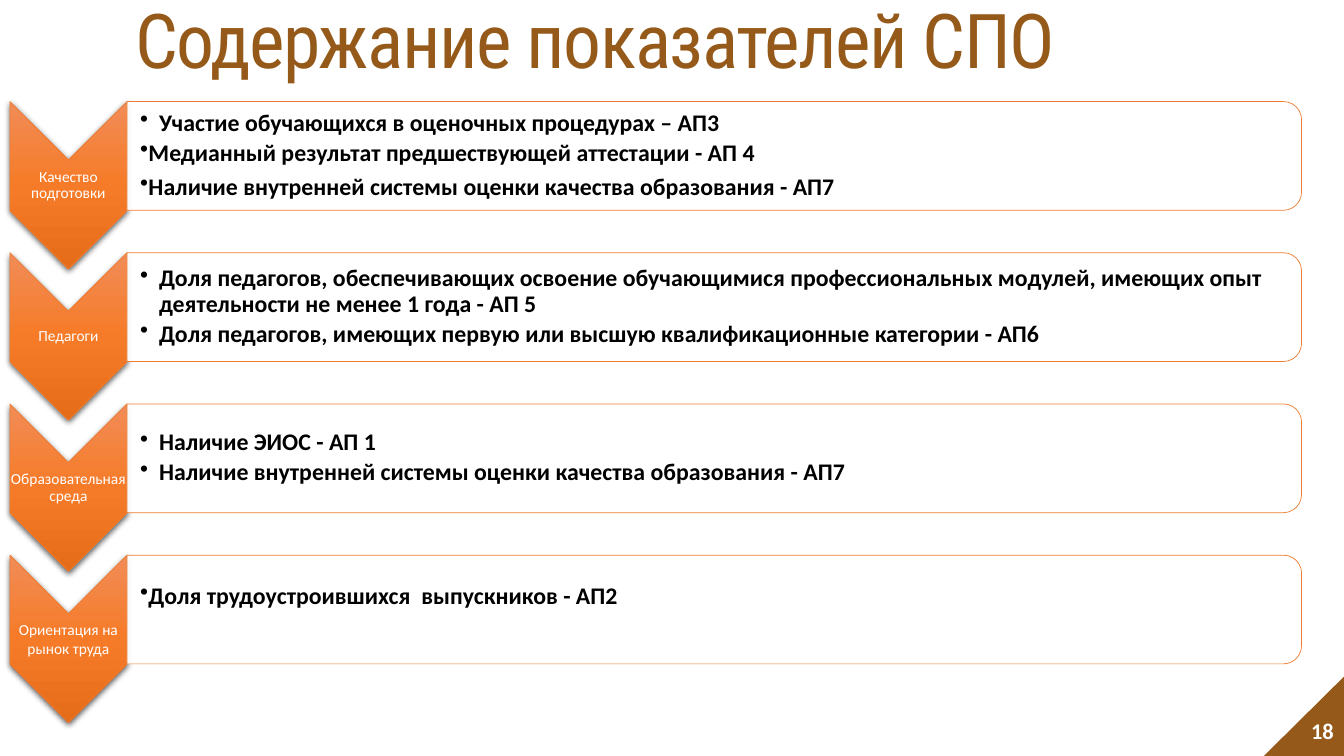
from dataclasses import dataclass

from lxml.etree import SubElement
from pptx import Presentation
from pptx.dml.color import RGBColor as Rgb
from pptx.enum.shapes import MSO_SHAPE as Preset
from pptx.enum.text import MSO_ANCHOR as Anchor, PP_ALIGN as Align
from pptx.oxml import parse_xml
from pptx.oxml.ns import nsdecls, qn
from pptx.util import Cm, Pt


@dataclass(frozen=True)
class Theme:
    brown: Rgb = Rgb.from_string("955A1A")
    orange: Rgb = Rgb.from_string("ED7D31")
    white: Rgb = Rgb.from_string("FFFFFF")
    black: Rgb = Rgb.from_string("000000")
    gradient: tuple = ((0, "F18C57"), (50, "F67B28"), (100, "E56C19"))
    heading_font: str = "Roboto Condensed"
    body_font: str = "Calibri"
    title_size: int = 54
    item_size: int = 17
    number_size: int = 16
    label_size: int = 11


theme = Theme()


def add_box(left, top, width, height, anchor, insets):
    """Add a wrapping text box; insets run left, top, right, bottom in cm."""
    frame = page.shapes.add_textbox(Cm(left), Cm(top), Cm(width), Cm(height)).text_frame
    frame.word_wrap = True
    frame.vertical_anchor = anchor
    frame.margin_left, frame.margin_top, frame.margin_right, frame.margin_bottom = map(Cm, insets)
    return frame


def add_span(para, text, size, color, bold=False, font=theme.body_font):
    span = para.add_run()
    span.text = text
    span.font.name = font
    span.font.size = Pt(size)
    span.font.bold = bold
    span.font.color.rgb = color
    return span


# Each item is its text and whether it has a hanging indent
sections = [
    ("Качество подготовки", [
        ("Участие обучающихся в оценочных процедурах – АП3", True),
        ("Медианный результат предшествующей аттестации - АП 4", False),
        ("Наличие внутренней системы оценки качества образования - АП7", False),
    ]),
    ("Педагоги", [
        ("Доля педагогов, обеспечивающих освоение обучающимися профессиональных модулей, "
         "имеющих опыт деятельности не менее 1 года - АП 5", True),
        ("Доля педагогов, имеющих первую или высшую квалификационные категории - АП6", True),
    ]),
    ("Образовательная среда", [
        ("Наличие ЭИОС - АП 1", True),
        ("Наличие внутренней системы оценки качества образования - АП7", True),
    ]),
    ("Ориентация на рынок труда", [
        ("Доля трудоустроившихся  выпускников - АП2", False),
    ]),
]

deck = Presentation()
deck.slide_width, deck.slide_height = Cm(33.87), Cm(19.05)
page = deck.slides.add_slide(deck.slide_layouts[6])

# Page corner and number
corner = page.shapes.add_shape(Preset.RIGHT_TRIANGLE, Cm(31.85), Cm(17.04), Cm(2.01), Cm(2.03))
corner.rotation = 270
corner.shadow.inherit = False
corner.fill.solid()
corner.fill.fore_color.rgb = theme.brown
corner.line.fill.background()

para = add_box(26.24, 17.91, 7.62, 1.02, Anchor.MIDDLE, (0.25, 0.13, 0.25, 0.13)).paragraphs[0]
para.alignment = Align.RIGHT
add_span(para, "18", theme.number_size, theme.white, bold=True)

# Title
para = add_box(0.38, 0.3, 29.24, 1.98, Anchor.BOTTOM, (0.25, 0.13, 0.25, 0.13)).paragraphs[0]
para.alignment = Align.CENTER
para.line_spacing = 0.9
title = add_span(para, "Содержание показателей СПО", theme.title_size, theme.brown,
                 font=theme.heading_font)
title.font._element.set("spc", "-100")

# Rows: a chevron pointing down and a panel rounded on the right
first_top, pitch = 2.56, 3.81
chevron_left, chevron_width, chevron_height = 0.25, 2.95, 4.22
panel_left, panel_width, panel_height = 3.2, 29.6, 2.74
stops = "".join(f'<a:gs pos="{place * 1000}"><a:srgbClr val="{color}"/></a:gs>'
                for place, color in theme.gradient)

for row, (label, items) in enumerate(sections):
    top = first_top + row * pitch
    last_row = row == len(sections) - 1

    # Rotated shapes are placed by their centre, with the sides swapped
    turned = []
    for preset, left, width, height in (
        (Preset.CHEVRON, chevron_left, chevron_width, chevron_height),
        (Preset.ROUND_2_SAME_RECTANGLE, panel_left, panel_width, panel_height),
    ):
        shift = (width - height) / 2
        shape = page.shapes.add_shape(preset, Cm(left + shift), Cm(top - shift),
                                      Cm(height), Cm(width))
        shape.rotation = 90
        shape.shadow.inherit = False
        shape.fill.solid()
        shape.fill.fore_color.rgb = theme.white
        shape.line.color.rgb = theme.orange
        shape.line.width = Pt(0.5)
        turned.append(shape)
    chevron, panel = turned

    properties = chevron._element.spPr
    properties.replace(properties.find(qn("a:solidFill")), parse_xml(
        f'<a:gradFill {nsdecls("a")} rotWithShape="0"><a:gsLst>{stops}</a:gsLst>'
        '<a:lin ang="5400000" scaled="0"/></a:gradFill>'))
    properties.replace(properties.find(qn("a:effectLst")), parse_xml(
        f'<a:effectLst {nsdecls("a")}><a:outerShdw blurRad="57150" dist="19050" dir="5400000" '
        'algn="ctr" rotWithShape="0"><a:srgbClr val="000000"><a:alpha val="63000"/></a:srgbClr>'
        '</a:outerShdw></a:effectLst>'))
    white = panel._element.spPr.find(qn("a:solidFill"))[0]
    SubElement(white, qn("a:alpha")).set("val", "90000")

    para = add_box(chevron_left, top + 1.48, chevron_width, 1.27, Anchor.MIDDLE,
                   (0.02, 0.02, 0.02, 0.02)).paragraphs[0]
    para.alignment = Align.CENTER
    para.line_spacing = 1.0 if last_row else 0.9
    add_span(para, label, theme.label_size, theme.white)

    bottom_inset = 0.65 if last_row else 0.02
    frame = add_box(panel_left, top + 0.13, 29.46, 2.46, Anchor.MIDDLE,
                    (0.33, 0.02, 0.02, bottom_inset))
    for index, (text, hanging) in enumerate(items):
        para = frame.add_paragraph() if index else frame.paragraphs[0]
        para.line_spacing = 0.9
        para.space_after = Pt(3 if hanging else 6)
        indent = Cm(0.48) if hanging else 0
        layout = para._p.get_or_add_pPr()
        layout.set("marL", str(indent))
        layout.set("indent", str(-indent))
        SubElement(layout, qn("a:buChar")).set("char", "•")
        add_span(para, text, theme.item_size, theme.black, bold=True)

deck.save("out.pptx")
